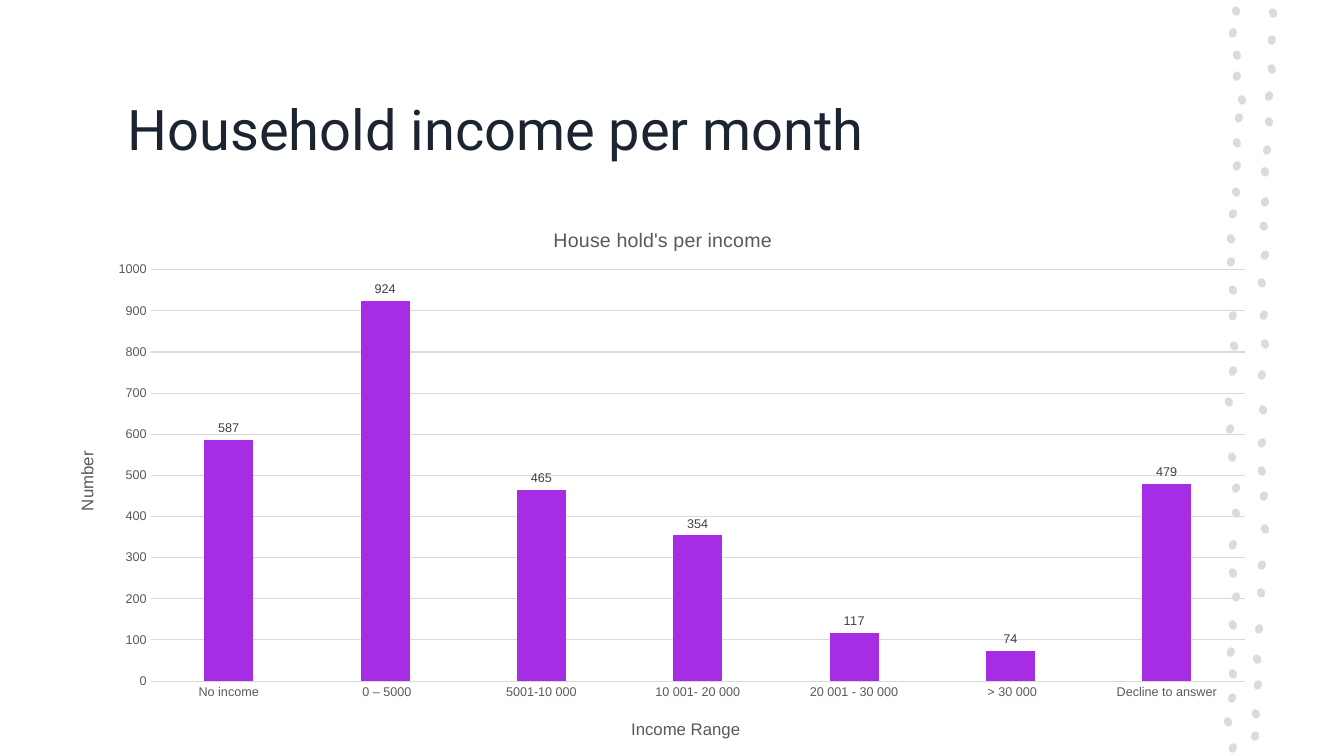
from lxml import etree
from pptx import Presentation
from pptx.chart.data import CategoryChartData
from pptx.dml.color import RGBColor
from pptx.enum.chart import XL_CHART_TYPE, XL_LABEL_POSITION, XL_TICK_MARK
from pptx.enum.shapes import MSO_SHAPE
from pptx.enum.text import MSO_ANCHOR
from pptx.oxml.ns import qn
from pptx.util import Cm, Pt

COLUMNS = XL_CHART_TYPE.COLUMN_CLUSTERED
OUTSIDE_END = XL_LABEL_POSITION.OUTSIDE_END
NO_TICK = XL_TICK_MARK.NONE
OVAL = MSO_SHAPE.OVAL
MIDDLE = MSO_ANCHOR.MIDDLE

NAVY = RGBColor(0x1C, 0x24, 0x31)
PURPLE = RGBColor(0xA6, 0x2D, 0xE3)
GREY = RGBColor(0x59, 0x59, 0x59)
LABEL_GREY = RGBColor(0x40, 0x40, 0x40)
GRID_GREY = RGBColor(0xD9, 0xD9, 0xD9)
DOT_GREY = RGBColor(0xD8, 0xDE, 0xD5)

INCOMES = [
    ("No income", 587), (" 0 – 5000", 924), ("5001-10 000", 465),
    ("10 001- 20 000", 354), ("20 001 - 30 000", 117),
    (" > 30 000", 74), ("Decline to answer", 479),
]

# Centres of the hand-placed dots, in cm from the corner of their strip
LEFT_DOTS = [
    (0.45, 0.28), (0.37, 0.83), (0.47, 1.39), (0.47, 1.92), (0.6, 2.52),
    (0.52, 2.97), (0.47, 3.6), (0.47, 4.18), (0.45, 4.84), (0.37, 5.39),
    (0.32, 6.02), (0.32, 6.6), (0.37, 7.31), (0.37, 7.96), (0.4, 8.72),
    (0.37, 9.35), (0.27, 10.13), (0.3, 10.81), (0.35, 11.52), (0.45, 12.3),
    (0.45, 12.93), (0.37, 13.73), (0.37, 14.44), (0.45, 15.04), (0.37, 15.75),
    (0.32, 16.43), (0.37, 16.98), (0.35, 17.59), (0.25, 18.19), (0.37, 18.85),
]
RIGHT_DOTS = [
    (1.38, 0.33), (1.35, 1.01), (1.35, 1.74), (1.28, 2.42), (1.28, 3.07),
    (1.23, 3.78), (1.18, 4.33), (1.18, 5.09), (1.15, 5.7), (1.18, 6.43),
    (1.1, 7.13), (1.15, 7.94), (1.18, 8.67), (1.1, 9.45), (1.13, 10.33),
    (1.1, 11.16), (1.1, 11.87), (1.15, 12.5), (1.18, 13.33), (1.1, 14.24),
    (1.08, 14.94), (1.03, 15.85), (0.98, 16.61), (1.0, 17.26), (0.95, 17.99),
    (0.93, 18.55),
]
DOT_W, DOT_H, DOT_TILT = 0.2, 0.24, 20


def style_font(font, size, color, name="Arial"):
    font.name = name
    font.size = Pt(size)
    font.bold = False
    font.color.rgb = color


def set_layout(parent, **fractions):
    """Place a chart part by fractions of the chart's size."""
    for old in parent.findall(qn("c:layout")):
        parent.remove(old)
    layout = etree.Element(qn("c:layout"))
    manual = etree.SubElement(layout, qn("c:manualLayout"))
    if "w" in fractions:
        etree.SubElement(manual, qn("c:layoutTarget")).set("val", "inner")
    for mode in ("xMode", "yMode"):
        etree.SubElement(manual, qn(f"c:{mode}")).set("val", "edge")
    for key, value in fractions.items():
        etree.SubElement(manual, qn(f"c:{key}")).set("val", str(value))
    tx = parent.find(qn("c:tx"))
    if tx is None:
        parent.insert(0, layout)
    else:
        tx.addnext(layout)


def write_title(title, text, size, x, y):
    r = title.text_frame.paragraphs[0].add_run()
    r.text = text
    style_font(r.font, size, GREY)
    set_layout(title._element, x=x, y=y)


def add_dots(slide, left, top):
    for column in (LEFT_DOTS, RIGHT_DOTS):
        for i, (x, y) in enumerate(column):
            sp = slide.shapes.add_shape(
                OVAL, Cm(left + x - DOT_W / 2), Cm(top + y - DOT_H / 2),
                Cm(DOT_W), Cm(DOT_H))
            sp.rotation = DOT_TILT if i % 2 else -DOT_TILT
            sp.shadow.inherit = False
            sp.fill.solid()
            sp.fill.fore_color.rgb = DOT_GREY
            sp.line.fill.background()


def add_heading(slide, left, top, width, height):
    sp = slide.shapes.add_textbox(Cm(left), Cm(top), Cm(width), Cm(height))
    tf = sp.text_frame
    tf.word_wrap = True
    tf.vertical_anchor = MIDDLE
    r = tf.paragraphs[0].add_run()
    r.text = "Household income per month"
    style_font(r.font, 40, NAVY, "Roboto")


def add_income_chart(slide, left, top, width, height):
    data = CategoryChartData(number_format="0")
    data.categories = [name for name, _ in INCOMES]
    data.add_series("House hold's per income", [n for _, n in INCOMES])
    chart = slide.shapes.add_chart(
        COLUMNS, Cm(left), Cm(top), Cm(width), Cm(height), data).chart
    style_font(chart.font, 10, GREY)
    chart.has_legend = False
    chart.has_title = True
    write_title(chart.chart_title, "House hold's per income", 14, 0.41, 0.04)
    set_layout(chart._chartSpace.chart.plotArea,
               x=0.083, y=0.123, w=0.896, h=0.742)

    # Axes
    cat, val = chart.category_axis, chart.value_axis
    for axis in (cat, val):
        axis.major_tick_mark = axis.minor_tick_mark = NO_TICK
        style_font(axis.tick_labels.font, 9, GREY)
    write_title(cat.axis_title, "Income Range", 12, 0.474, 0.928)
    write_title(val.axis_title, "Number", 12, 0.02, 0.445)
    val.axis_title.text_frame._txBody.bodyPr.set("rot", "-5400000")
    val.minimum_scale, val.maximum_scale, val.major_unit = 0, 1000, 100
    val.format.line.fill.background()
    val.has_major_gridlines = True
    for line in (cat.format.line, val.major_gridlines.format.line):
        line.color.rgb = GRID_GREY
        line.width = Pt(0.75)

    # Columns and their values
    plot = chart.plots[0]
    plot.gap_width, plot.overlap = 219, -27
    plot.vary_by_categories = False
    series = plot.series[0]
    series.format.fill.solid()
    series.format.fill.fore_color.rgb = PURPLE
    labels = series.data_labels
    labels.show_value = True
    labels.position = OUTSIDE_END
    style_font(labels.font, 9, LABEL_GREY)


def main():
    prs = Presentation()
    prs.slide_width, prs.slide_height = Cm(33.87), Cm(19.05)
    slide = prs.slides.add_slide(prs.slide_layouts[6])
    add_dots(slide, 30.7, 0)
    add_heading(slide, 2.97, 1.4, 26.77, 3.68)
    add_income_chart(slide, 1.24, 5.08, 30.78, 13.97)
    prs.save("out.pptx")


if __name__ == "__main__":
    main()
